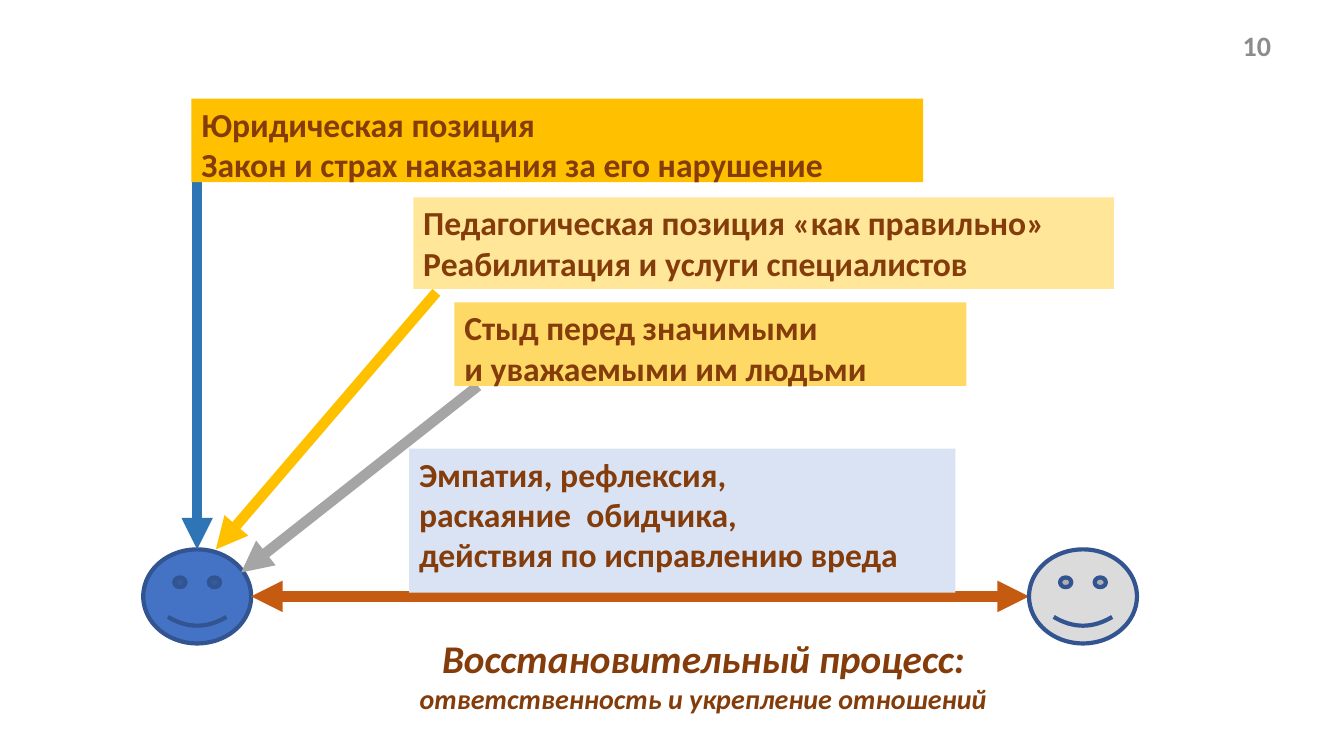
from lxml import etree
from pptx import Presentation
from pptx import util as u
from pptx.dml.color import RGBColor
from pptx.enum import shapes, text
from pptx.oxml.ns import qn

COLUMNS, ROWS = 32, 18
BROWN, OUTLINE = "843C0B", "325491"
BLUE, GREY, GOLD, ORANGE = "2E75B6", "A5A5A5", "FFC000", "C55A11"


def color(code):
    return RGBColor.from_string(code)


class Board:
    """Draws on one slide; all lengths are columns and rows of its grid."""

    font_name = "Calibri"
    arrow_width = u.Pt(7.5)
    outline_width = u.Pt(3)

    def __init__(self, presentation):
        self.slide = presentation.slides.add_slide(presentation.slide_layouts[6])
        self.column = presentation.slide_width / COLUMNS
        self.row = presentation.slide_height / ROWS

    def place(self, across, down):
        return round(across * self.column), round(down * self.row)

    def frame(self, left, top, width, height):
        return *self.place(left, top), *self.place(width, height)

    def shape(self, kind, area, fill):
        shape = self.slide.shapes.add_shape(kind, *self.frame(*area))
        shape.shadow.inherit = False
        shape.fill.solid()
        shape.fill.fore_color.rgb = color(fill)
        return shape

    def face(self, left, top, fill):
        shape = self.shape(shapes.MSO_SHAPE.SMILEY_FACE,
                           (left, top, FACE_WIDTH, FACE_HEIGHT), fill)
        shape.line.color.rgb = color(OUTLINE)
        shape.line.width = self.outline_width

    def arrow(self, tip, origin, line_color, ends=("headEnd",)):
        connector = self.slide.shapes.add_connector(
            shapes.MSO_CONNECTOR.STRAIGHT, *self.place(*tip), *self.place(*origin))
        connector.line.color.rgb = color(line_color)
        connector.line.width = self.arrow_width
        line = connector._element.spPr.find(qn("a:ln"))
        for end in ends:
            etree.SubElement(line, qn("a:" + end), type="triangle")
        etree.SubElement(connector._element.spPr, qn("a:effectLst"))

    def fill_text(self, shape, lines, size, font_color=BROWN,
                  align=text.PP_ALIGN.LEFT, anchor=text.MSO_ANCHOR.TOP):
        """Fills the shape with one bold paragraph per line."""
        frame = shape.text_frame
        frame.word_wrap = True
        frame.vertical_anchor = anchor
        frame.text = "\n".join(lines)
        for paragraph in frame.paragraphs:
            paragraph.alignment = align
            font = paragraph.font
            font.name, font.size, font.bold = self.font_name, u.Pt(size), True
            font.color.rgb = color(font_color)
        return frame

    def box(self, area, fill, *lines):
        shape = self.shape(shapes.MSO_SHAPE.RECTANGLE, area, fill)
        shape.line.fill.background()
        self.fill_text(shape, lines, 24)

    def label(self, area, line, size, **style):
        shape = self.slide.shapes.add_textbox(*self.frame(*area))
        return self.fill_text(shape, [line], size, **style)

    def caption(self, area, title, subtitle):
        """Adds an italic title with a smaller second line."""
        frame = self.label(area, title, 28, align=text.PP_ALIGN.CENTER)
        paragraph = frame.paragraphs[0]
        paragraph.font.italic = True
        paragraph.add_line_break()
        run = paragraph.add_run()
        run.text = subtitle
        run.font.size = u.Pt(20)


FACE_WIDTH, FACE_HEIGHT = 2.57, 2.24
OFFENDER_LEFT, VICTIM_LEFT, FACE_TOP = 3.41, 24.5, 13.08
OFFENDER_MIDDLE = OFFENDER_LEFT + FACE_WIDTH / 2
OFFENDER_RIGHT = OFFENDER_LEFT + FACE_WIDTH
FACE_CENTER = FACE_TOP + FACE_HEIGHT / 2


def main():
    presentation = Presentation()
    presentation.slide_width = u.Inches(13.33)
    presentation.slide_height = u.Inches(7.5)
    board = Board(presentation)

    board.face(OFFENDER_LEFT, FACE_TOP, "4472C4")
    board.arrow((OFFENDER_MIDDLE, FACE_TOP), (OFFENDER_MIDDLE, 4.1), BLUE)
    board.arrow((5.74, 13.63), (11.38, 9.19), GREY)
    board.arrow((5.14, FACE_TOP), (10.39, 6.96), GOLD)
    board.arrow((OFFENDER_RIGHT, FACE_CENTER), (VICTIM_LEFT, FACE_CENTER),
                ORANGE, ends=("headEnd", "tailEnd"))

    board.box((4.56, 2.35, 17.42, 1.99), GOLD,
              "Юридическая позиция", "Закон и страх наказания за его нарушение")
    board.box((10.82, 7.2, 12.19, 1.99), "FFD966",
              "Стыд перед значимыми", "и уважаемыми им людьми")
    board.box((9.74, 10.68, 13.01, 3.43), "DAE3F3", "Эмпатия, рефлексия,",
              "раскаяние  обидчика,", "действия по исправлению вреда")
    board.box((9.84, 4.7, 16.68, 2.18), "FFE699",
              "Педагогическая позиция «как правильно»",
              "Реабилитация и услуги специалистов")
    board.face(VICTIM_LEFT, FACE_TOP, "DBDBDB")

    board.caption((7.66, 14.98, 18.17, 1.99), "Восстановительный процесс:",
                  "ответственность и укрепление отношений")
    board.label((23.3, 0.6, 7.2, 0.96), "10", 20, font_color="8C8C8C",
                align=text.PP_ALIGN.RIGHT, anchor=text.MSO_ANCHOR.MIDDLE)
    presentation.save("out.pptx")


if __name__ == "__main__":
    main()
